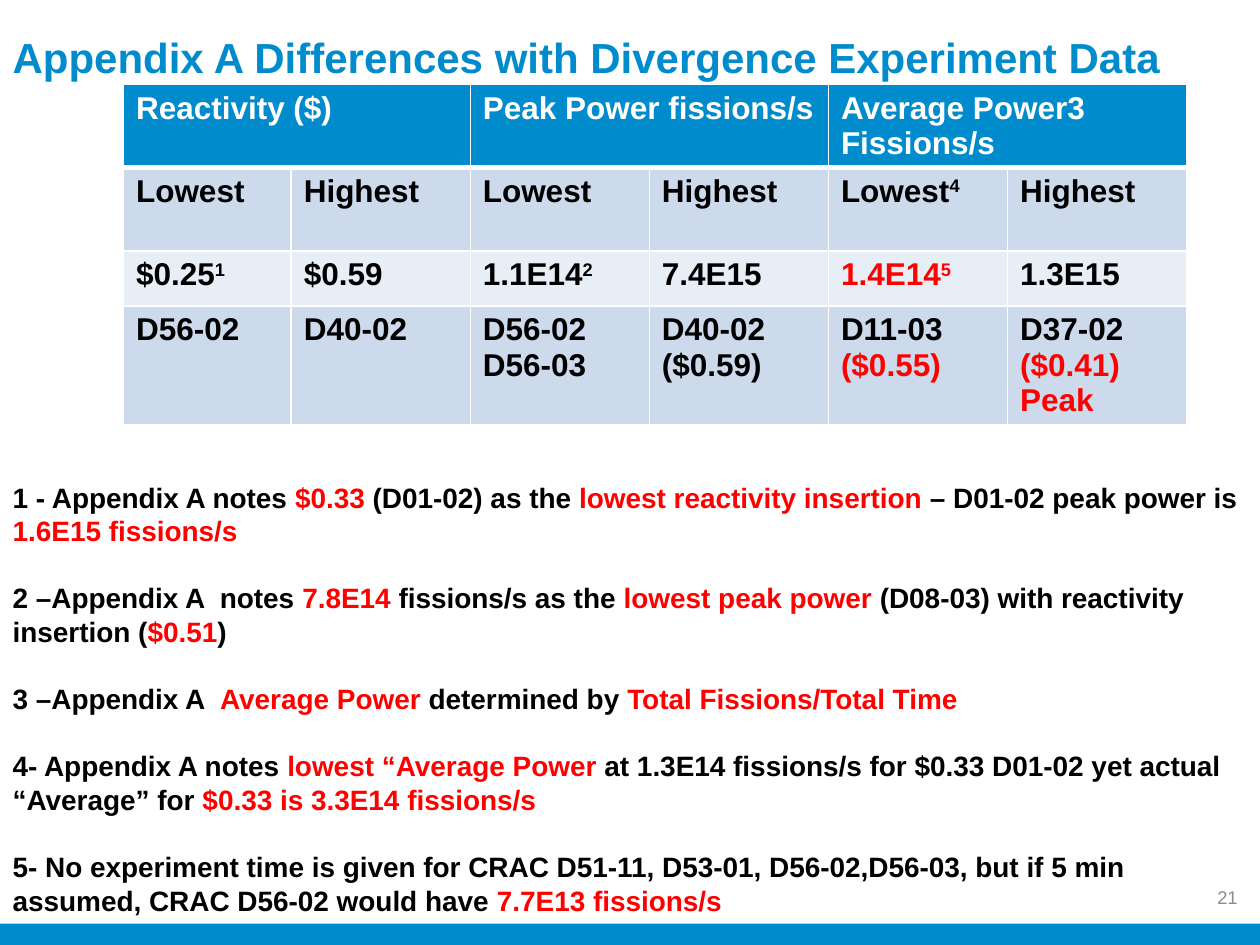
from dataclasses import dataclass

from lxml.etree import SubElement
from pptx import Presentation
from pptx.dml.color import RGBColor
from pptx.enum.shapes import MSO_SHAPE
from pptx.enum.text import MSO_ANCHOR, MSO_AUTO_SIZE, PP_ALIGN
from pptx.oxml.ns import qn
from pptx.util import Cm, Pt

BLUE = RGBColor(0x00, 0x8C, 0xCC)
BAND_DARK = RGBColor(0xCC, 0xDA, 0xEC)
BAND_LIGHT = RGBColor(0xE7, 0xEE, 0xF6)
WHITE = RGBColor(0xFF, 0xFF, 0xFF)
BLACK = RGBColor(0x00, 0x00, 0x00)
RED = RGBColor(0xFF, 0x00, 0x00)
GREY = RGBColor(0x8C, 0x8C, 0x8C)


@dataclass
class Run:
    text: str
    color: RGBColor = BLACK
    superscript: bool = False


@dataclass
class Row:
    height: float
    fill: RGBColor
    cells: list


def red(text: str) -> Run:
    return Run(text, RED)


def sup(text: str, color: RGBColor = BLACK) -> Run:
    return Run(text, color, True)


def header(*lines: str) -> list:
    return [[Run(line, WHITE)] for line in lines]


def plain(*lines: str) -> list:
    return [[Run(line)] for line in lines]


ROWS = [
    Row(1.66, BLUE, [header("Reactivity ($)"), None,
                     header("Peak Power fissions/s"), None,
                     header("Average Power3", "Fissions/s"), None]),
    Row(1.68, BAND_DARK, [plain("Lowest"), plain("Highest"),
                          plain("Lowest"), plain("Highest"),
                          [[Run("Lowest"), sup("4")]], plain("Highest")]),
    Row(1.11, BAND_LIGHT, [[[Run("$0.25"), sup("1")]], plain("$0.59"),
                           [[Run("1.1E14"), sup("2")]], plain("7.4E15"),
                           [[red("1.4E14"), sup("5", RED)]], plain("1.3E15")]),
    Row(2.37, BAND_DARK, [plain("D56-02"), plain("D40-02"),
                          plain("D56-02", "D56-03"), plain("D40-02", "($0.59)"),
                          [[Run("D11-03 "), red("($0.55)")]],
                          [[Run("D37-02")], [red("($0.41)")], [red("Peak")]]]),
]
COL_WIDTHS = [3.38] + [3.61] * 5

NOTES = [
    [Run("1 - Appendix A notes "), red("$0.33 "), Run("(D01-02) as the "),
     red("lowest reactivity insertion"), Run(" – D01-02 peak power is "),
     red("1.6E15 fissions/s")],
    [Run("2 –Appendix A  notes "), red("7.8E14"), Run(" fissions/s as the "),
     red("lowest peak power "), Run("(D08-03) with reactivity insertion ("),
     red("$0.51"), Run(")")],
    [Run("3 –Appendix A  "), red("Average Power "), Run("determined by "),
     red("Total Fissions/Total Time")],
    [Run("4- Appendix A notes "), red("lowest “Average Power "),
     Run("at 1.3E14 fissions/s for $0.33 D01-02 yet actual “Average” for "),
     red("$0.33 is 3.3E14 fissions/s")],
    [Run("5- No experiment time is given for CRAC D51-11, D53-01, "
         "D56-02,D56-03, but if 5 min assumed, CRAC D56-02 would have "),
     red("7.7E13 fissions/s")],
]


def apply(target, formats: dict) -> None:
    for name, value in formats.items():
        setattr(target, name, value)


def place(sp, left: float, top: float, width: float, height: float) -> None:
    apply(sp, {"left": Cm(left), "top": Cm(top),
               "width": Cm(width), "height": Cm(height)})


def write(tf, paragraphs: list, size: float, bold: bool = True,
          formats: dict | None = None) -> None:
    for i, runs in enumerate(paragraphs):
        p = tf.paragraphs[0] if i == 0 else tf.add_paragraph()
        apply(p, formats or {})
        for run in runs:
            r = p.add_run()
            r.text = run.text
            apply(r.font, {"name": "Arial", "size": Pt(size), "bold": bold})
            r.font.color.rgb = run.color
            if run.superscript:
                r._r.get_or_add_rPr().set("baseline", "30000")


def set_borders(cell, widths: dict) -> None:
    tc_pr = cell._tc.get_or_add_tcPr()
    for side, width in widths.items():
        ln = SubElement(tc_pr, qn(f"a:ln{side}"), w=str(Pt(width)))
        fill = SubElement(ln, qn("a:solidFill"))
        SubElement(fill, qn("a:srgbClr"), val=str(WHITE))


def add_bar(s) -> None:
    sp = s.shapes.add_shape(MSO_SHAPE.RECTANGLE, 0, Cm(18.62), Cm(25.4), Cm(0.43))
    sp.shadow.inherit = False
    sp.fill.solid()
    sp.fill.fore_color.rgb = BLUE
    sp.line.fill.background()


def add_title(s, text: str) -> None:
    sp = s.shapes.title
    place(sp, 0, 0, 23.7, 1.65)
    apply(sp.text_frame, {"vertical_anchor": MSO_ANCHOR.BOTTOM, "word_wrap": True,
                          "auto_size": MSO_AUTO_SIZE.NONE, "margin_bottom": 0})
    write(sp.text_frame, [[Run(text, BLUE)]], 24, formats={"alignment": PP_ALIGN.LEFT})


def add_data_table(s) -> None:
    table = s.shapes.add_table(len(ROWS), len(COL_WIDTHS), Cm(2.49), Cm(1.7),
                               Cm(sum(COL_WIDTHS)),
                               Cm(sum(row.height for row in ROWS))).table
    for column, width in zip(table.columns, COL_WIDTHS):
        column.width = Cm(width)
    for i, row in enumerate(ROWS):
        table.rows[i].height = Cm(row.height)
        for j, content in enumerate(row.cells):
            cell = table.cell(i, j)
            set_borders(cell, {"L": 1, "R": 1, "T": 3 if i == 1 else 1,
                               "B": 3 if i == 0 else 1})
            cell.fill.solid()
            cell.fill.fore_color.rgb = row.fill
            if content is None:
                table.cell(i, j - 1).merge(cell)
            else:
                write(cell.text_frame, content, 18)


def add_notes_list(s) -> None:
    sp = s.placeholders[1]
    place(sp, 0, 9.55, 25.45, 9.14)
    tf = sp.text_frame
    apply(tf, {"word_wrap": True, "auto_size": MSO_AUTO_SIZE.NONE})
    write(tf, NOTES, 16, formats={"line_spacing": 1.0, "space_before": Pt(19.2)})
    tf.paragraphs[0].space_before = Pt(0)
    for p in tf.paragraphs:
        p_pr = p._p.get_or_add_pPr()
        p_pr.set("marL", "0")
        p_pr.set("indent", "0")
        SubElement(p_pr, qn("a:buNone"))


def add_page_number(s, number: str) -> None:
    tf = s.shapes.add_textbox(Cm(23.93), Cm(17.58), Cm(1.27), Cm(1.02)).text_frame
    apply(tf, {"word_wrap": True, "vertical_anchor": MSO_ANCHOR.MIDDLE})
    write(tf, [[Run(number, GREY)]], 10.5, False, {"alignment": PP_ALIGN.RIGHT})


def main() -> None:
    prs = Presentation()
    apply(prs, {"slide_width": Cm(25.4), "slide_height": Cm(19.05)})
    s = prs.slides.add_slide(prs.slide_layouts[1])
    add_bar(s)
    add_title(s, "Appendix A Differences with Divergence Experiment Data")
    add_data_table(s)
    add_page_number(s, "21")
    add_notes_list(s)
    prs.save("out.pptx")


if __name__ == "__main__":
    main()
